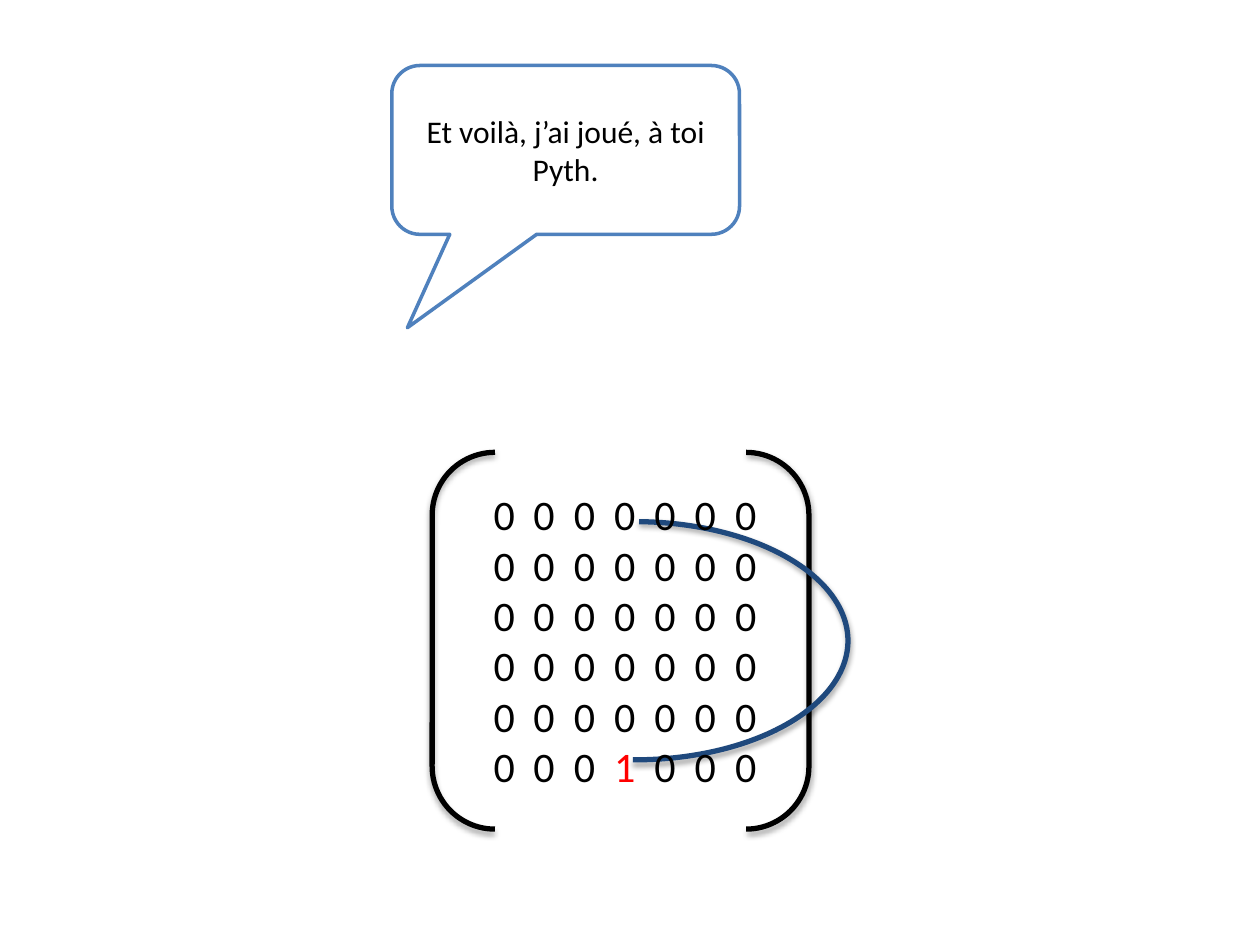
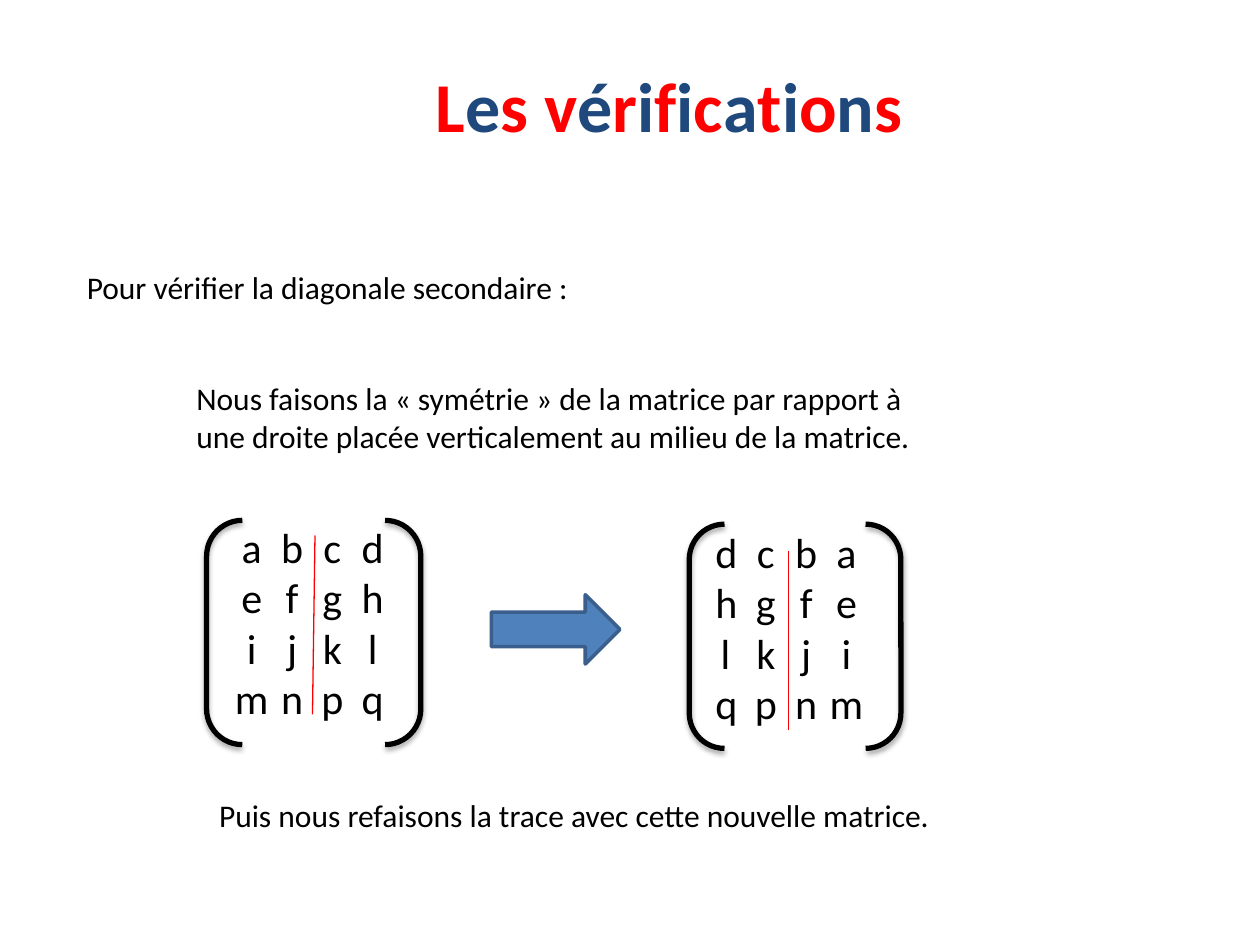
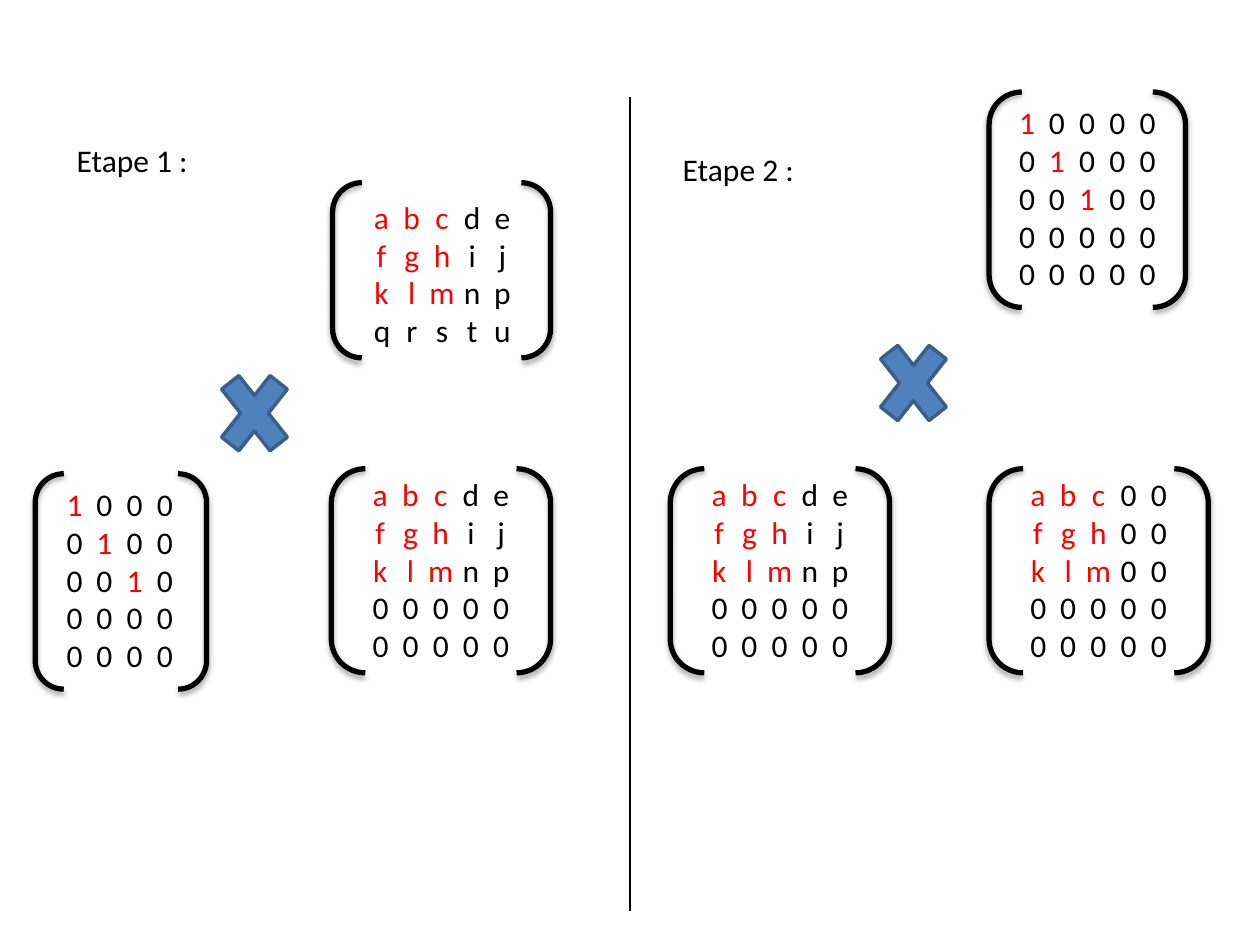
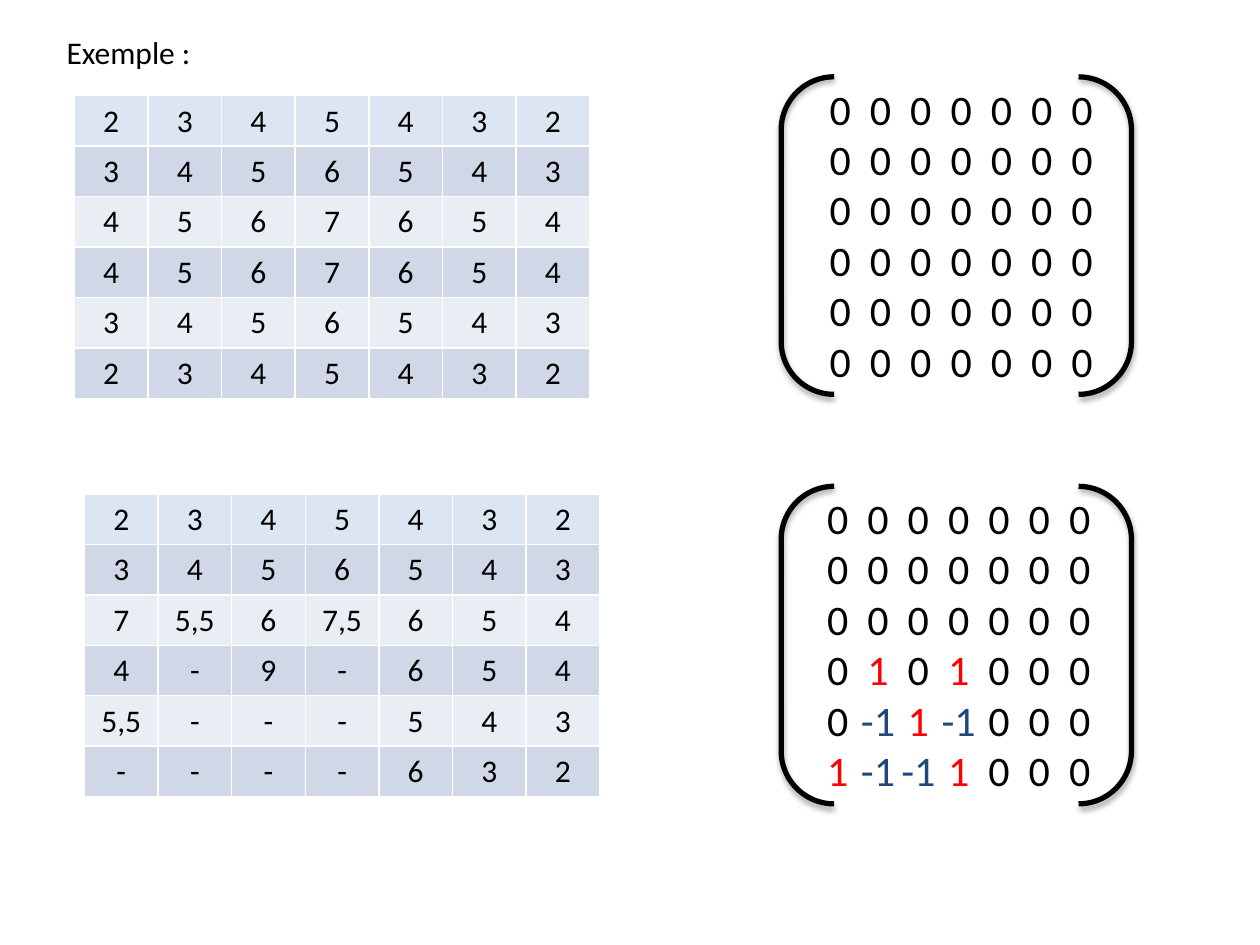
from dataclasses import dataclass
from itertools import groupby

import pptx
import pptx.dml.color
import pptx.enum.shapes
import pptx.enum.text
import pptx.oxml
import pptx.oxml.ns
import pptx.util
from pptx.util import Inches

SHAPES = pptx.enum.shapes.MSO_SHAPE
ALIGN = pptx.enum.text.PP_ALIGN
ANCHOR = pptx.enum.text.MSO_ANCHOR
FIT = pptx.enum.text.MSO_AUTO_SIZE
TITLE_ONLY, BLANK = 5, 6


@dataclass(frozen=True)
class Theme:
    font: str = "Calibri"
    title_size: int = 40
    matrix_size: int = 24
    body_size: int = 18
    black: str = "000000"
    white: str = "FFFFFF"
    red: str = "FF0000"
    navy: str = "1F497D"
    blue: str = "4F81BD"
    blue_edge: str = "3A5F8C"
    header_fill: str = "DCE6F2"
    odd_row_fill: str = "D0D8E8"
    even_row_fill: str = "E9EDF4"


THEME = Theme()
MARKS = {"*": THEME.red, "_": THEME.navy}

ZEROS = "0 0 0 0 0 0 0"
DIAGONAL_4 = ["*1 0 0 0", "0 *1 0 0", "0 0 *1 0", "0 0 0 0", "0 0 0 0"]
DIAGONAL_5 = [row + " 0" for row in DIAGONAL_4]
LETTERS = ["*a *b *c d e", "*f *g *h i j", "*k *l *m n p"]
TWO_ZERO_ROWS = ["0 0 0 0 0"] * 2


def rgb(color):
    return pptx.dml.color.RGBColor.from_string(color)


def format_run(run, size, color=THEME.black, bold=False):
    run.font.name = THEME.font
    run.font.size = pptx.util.Pt(size)
    run.font.bold = bold
    run.font.color.rgb = rgb(color)


def add_effects(shape, content=""):
    """Write the effect list; an empty one removes the inherited shadow."""
    namespace = pptx.oxml.ns.nsdecls("a")
    shape._element.spPr.append(
        pptx.oxml.parse_xml(f"<a:effectLst {namespace}>{content}</a:effectLst>"))


def add_soft_shadow(shape):
    add_effects(shape, '<a:outerShdw blurRad="40000" dist="23000" dir="5400000" rotWithShape="0">'
                       '<a:srgbClr val="000000"><a:alpha val="35000"/></a:srgbClr></a:outerShdw>')


def add_outline(slide, preset, place, color=THEME.black):
    shape = slide.shapes.add_shape(preset, *map(Inches, place))
    shape.fill.background()
    shape.line.color.rgb = rgb(color)
    shape.line.width = pptx.util.Pt(3)
    add_soft_shadow(shape)
    return shape


def add_solid(slide, preset, place, fill=THEME.blue, edge=THEME.blue_edge):
    shape = slide.shapes.add_shape(preset, *map(Inches, place))
    shape.shadow.inherit = False
    shape.fill.solid()
    shape.fill.fore_color.rgb = rgb(fill)
    shape.line.color.rgb = rgb(edge)
    shape.line.width = pptx.util.Pt(2)
    return shape


def add_line(slide, start, end, color):
    line = slide.shapes.add_connector(pptx.enum.shapes.MSO_CONNECTOR.STRAIGHT,
                                      *map(Inches, start + end))
    line.line.color.rgb = rgb(color)
    line.line.width = pptx.util.Pt(0.75)
    add_effects(line)


def add_text_box(slide, place):
    box = slide.shapes.add_textbox(*map(Inches, place))
    box.text_frame.word_wrap = True
    box.text_frame.auto_size = FIT.SHAPE_TO_FIT_TEXT
    return box


def add_text(slide, place, text):
    box = add_text_box(slide, place)
    box.text_frame.text = text
    format_run(box.text_frame.paragraphs[0].runs[0], THEME.body_size)


def add_callout(slide, place, text):
    box = add_solid(slide, SHAPES.ROUNDED_RECTANGULAR_CALLOUT, place, THEME.white, THEME.blue)
    for index, value in enumerate((-0.455, 1.053, 0.167)):
        box.adjustments[index] = value
    frame = box.text_frame
    frame.text = text
    frame.word_wrap = True
    frame.vertical_anchor = ANCHOR.MIDDLE
    frame.paragraphs[0].alignment = ALIGN.CENTER
    format_run(frame.paragraphs[0].runs[0], THEME.body_size)


def set_title(slide, place, text):
    """Fill the title with letters that alternate between red and navy."""
    title = slide.shapes.title
    title.left, title.top, title.width, title.height = map(Inches, place)
    frame = title.text_frame
    frame.auto_size = FIT.NONE
    frame.vertical_anchor = ANCHOR.TOP
    para = frame.paragraphs[0]
    para.alignment = ALIGN.CENTER
    for index, letter in enumerate(text):
        run = para.add_run()
        run.text = letter
        format_run(run, THEME.title_size, (THEME.red, THEME.navy)[index % 2], bold=True)


def add_centred_tabs(para, positions):
    tabs = "".join(f'<a:tab pos="{Inches(position)}" algn="ctr"/>' for position in positions)
    namespace = pptx.oxml.ns.nsdecls("a")
    para._p.get_or_add_pPr().append(
        pptx.oxml.parse_xml(f"<a:tabLst {namespace}>{tabs}</a:tabLst>"))


def add_entries(slide, place, rows, size, indent=0):
    """Set matrix rows on centred tabs; * marks a red entry and _ a navy one."""
    frame = add_text_box(slide, place).text_frame
    for index, row in enumerate(rows):
        para = frame.add_paragraph() if index else frame.paragraphs[0]
        entries = row.split()
        add_centred_tabs(para, [indent + size / 300 + column * size / 75
                                for column in range(len(entries))])
        for color, group in groupby(entries, lambda entry: MARKS.get(entry[0], THEME.black)):
            run = para.add_run()
            run.text = "".join("\t" + entry.lstrip("*_") for entry in group)
            format_run(run, size, color)


def add_matrix(slide, brackets, place, rows, size=THEME.body_size, indent=0):
    add_outline(slide, SHAPES.DOUBLE_BRACKET, brackets)
    add_entries(slide, place, rows, size, indent)


def add_score_table(slide, left, top, rows):
    values = [row.split() for row in rows]
    table = slide.shapes.add_table(len(values), len(values[0]), Inches(left), Inches(top),
                                   Inches(4.09), Inches(2.4)).table
    for row_index, row in enumerate(values):
        fill = (THEME.even_row_fill, THEME.odd_row_fill)[row_index % 2]
        for column_index, value in enumerate(row):
            cell = table.cell(row_index, column_index)
            cell.fill.solid()
            cell.fill.fore_color.rgb = rgb(fill if row_index else THEME.header_fill)
            cell.text_frame.text = value
            para = cell.text_frame.paragraphs[0]
            para.alignment = ALIGN.CENTER
            format_run(para.runs[0], THEME.body_size)


def build_move_slide(deck):
    slide = deck.slides.add_slide(deck.slide_layouts[BLANK])
    add_callout(slide, (3.11, 0.52, 2.76, 1.34), "Et voilà, j’ai joué, à toi Pyth.")
    add_outline(slide, SHAPES.DOUBLE_BRACKET, (3.43, 3.59, 2.99, 2.99))
    arc = add_outline(slide, SHAPES.ARC, (3.35, 4.14, 3.38, 1.89), THEME.navy)
    for index, degrees in enumerate((272, 91)):
        arc.adjustments[index] = degrees * 0.6
    add_entries(slide, (3.82, 3.83, 2.56, 2.52), [ZEROS] * 5 + ["0 0 0 *1 0 0 0"],
                THEME.matrix_size)


def build_symmetry_slide(deck):
    slide = deck.slides.add_slide(deck.slide_layouts[TITLE_ONLY])
    set_title(slide, (2.31, 0.45, 6, 0.77), "Les vérifications")
    add_text(slide, (0.59, 2.08, 4.49, 0.4), "Pour vérifier la diagonale secondaire :")
    add_text(slide, (1.46, 2.96, 5.98, 0.71),
             "Nous faisons la « symétrie » de la matrice par rapport à "
             "une droite placée verticalement au milieu de la matrice.")
    rows = ["a b c d", "e f g h", "i j k l", "m n p q"]
    mirrored = [row[::-1] for row in rows]
    add_matrix(slide, (1.64, 4.13, 1.7, 1.78), (1.76, 4.09, 1.43, 1.72), rows,
               THEME.matrix_size, indent=0.06)
    add_matrix(slide, (5.47, 4.16, 1.68, 1.78), (5.58, 4.13, 1.4, 1.72), mirrored,
               THEME.matrix_size)
    add_line(slide, (2.5, 4.25), (2.48, 5.67), THEME.red)
    add_line(slide, (6.26, 4.37), (6.26, 5.79), THEME.red)
    add_solid(slide, SHAPES.RIGHT_ARROW, (3.9, 4.72, 1.02, 0.55))
    add_text(slide, (1.64, 6.27, 6.43, 0.4),
             "Puis nous refaisons la trace avec cette nouvelle matrice.")


def build_steps_slide(deck):
    slide = deck.slides.add_slide(deck.slide_layouts[BLANK])
    add_text(slide, (0.51, 1.07, 1.98, 0.4), "Etape 1 :")
    add_text(slide, (5.32, 1.14, 1.98, 0.4), "Etape 2 :")
    add_line(slide, (5, 0.77), (5, 7.23), THEME.black)
    for left, top in ((1.65, 2.81), (6.88, 2.57)):
        add_solid(slide, SHAPES.MATH_MULTIPLY, (left, top, 0.74, 0.94))

    add_matrix(slide, (2.64, 1.45, 1.73, 1.39), (2.87, 1.52, 1.34, 1.31),
               LETTERS + ["q r s t u"])
    add_matrix(slide, (0.28, 3.76, 1.36, 1.71), (0.43, 3.8, 1.07, 1.62), DIAGONAL_4)
    add_matrix(slide, (7.85, 0.73, 1.56, 1.71), (7.99, 0.77, 1.5, 1.62), DIAGONAL_5)

    kept_rows = LETTERS + TWO_ZERO_ROWS
    kept_block = ["*a *b *c 0 0", "*f *g *h 0 0", "*k *l *m 0 0"] + TWO_ZERO_ROWS
    for left, rows in ((2.63, kept_rows), (5.32, kept_rows), (7.85, kept_block)):
        add_matrix(slide, (left, 3.72, 1.74, 1.62), (left + 0.23, 3.72, 1.34, 1.62), rows)


def build_example_slide(deck):
    slide = deck.slides.add_slide(deck.slide_layouts[BLANK])
    add_text(slide, (0.43, 0.21, 1.57, 0.4), "Exemple :")
    add_score_table(slide, 0.59, 0.76, [
        "2 3 4 5 4 3 2",
        "3 4 5 6 5 4 3",
        "4 5 6 7 6 5 4",
        "4 5 6 7 6 5 4",
        "3 4 5 6 5 4 3",
        "2 3 4 5 4 3 2",
    ])
    add_score_table(slide, 0.67, 3.92, [
        "2 3 4 5 4 3 2",
        "3 4 5 6 5 4 3",
        "7 5,5 6 7,5 6 5 4",
        "4 - 9 - 6 5 4",
        "5,5 - - - 5 4 3",
        "- - - - 6 3 2",
    ])
    played = [ZEROS] * 3 + ["0 *1 0 *1 0 0 0", "0 _-1 *1 _-1 0 0 0", "*1 _-1 _-1 *1 0 0 0"]
    for top, left, width, rows in ((0.61, 6.42, 2.56, [ZEROS] * 6), (3.86, 6.4, 2.38, played)):
        add_matrix(slide, (6.2, top, 2.78, 2.52), (left, top, width, 2.52), rows,
                   THEME.matrix_size, indent=0.07)


def main():
    deck = pptx.Presentation()
    deck.slide_width, deck.slide_height = Inches(10), Inches(7.5)
    build_move_slide(deck)
    build_symmetry_slide(deck)
    build_steps_slide(deck)
    build_example_slide(deck)
    deck.save("out.pptx")


if __name__ == "__main__":
    main()
